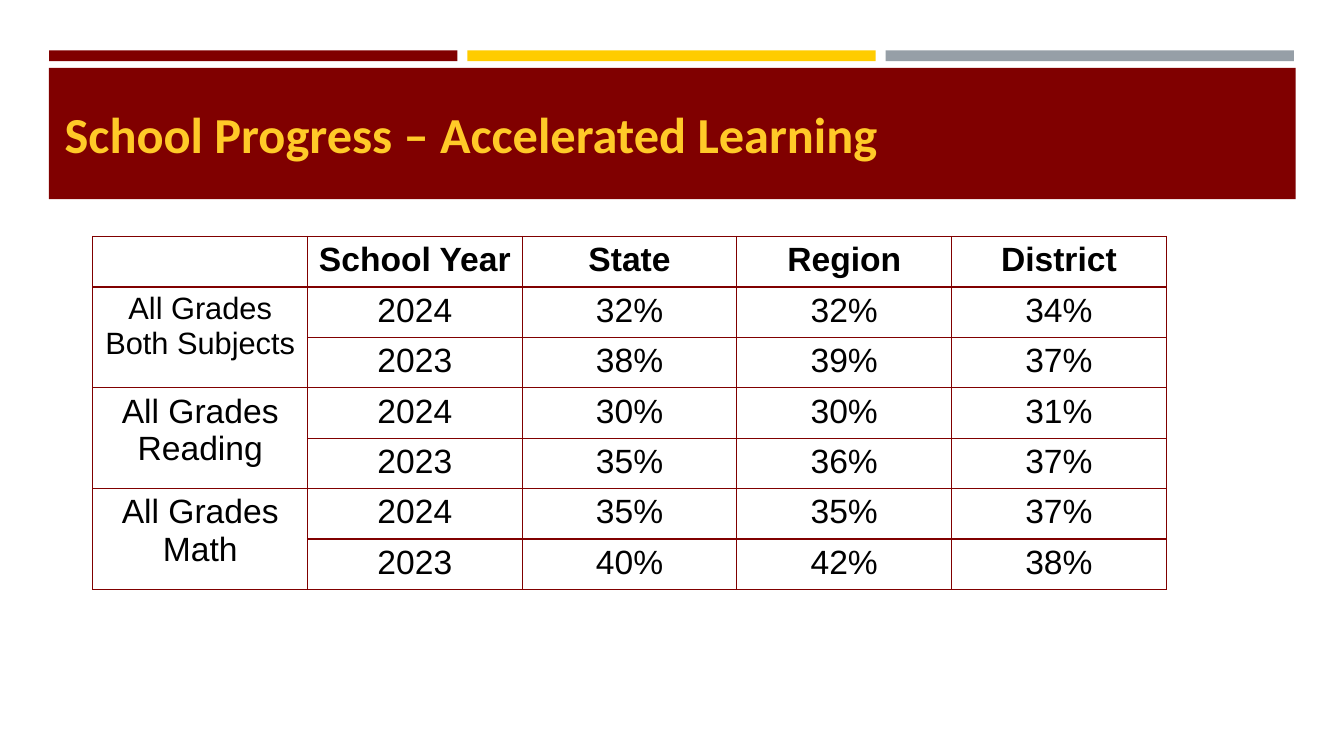
"""Build the school progress slide with its accelerated learning table."""
from lxml.etree import SubElement
from pptx import Presentation
from pptx.dml.color import RGBColor
from pptx.enum.shapes import MSO_SHAPE
from pptx.enum.text import MSO_ANCHOR, PP_ALIGN
from pptx.oxml.ns import qn
from pptx.util import Cm, Pt

MAROON = RGBColor(0x80, 0x00, 0x00)
GOLD = RGBColor(0xFF, 0xCC, 0x00)
GRAY = RGBColor(0x96, 0x9F, 0xA7)
AMBER = RGBColor(0xFF, 0xCA, 0x28)
BLACK = RGBColor(0x00, 0x00, 0x00)

TITLE = "School Progress – Accelerated Learning"
HEADS = ["", "School Year", "State", "Region", "District"]
GROUPS = [
    ("All Grades Both Subjects", 22, [
        ("2024", "32%", "32%", "34%"),
        ("2023", "38%", "39%", "37%")]),
    ("All Grades Reading", 24, [
        ("2024", "30%", "30%", "31%"),
        ("2023", "35%", "36%", "37%")]),
    ("All Grades Math", 24, [
        ("2024", "35%", "35%", "37%"),
        ("2023", "40%", "42%", "38%")]),
]
BARS = [MAROON, GOLD, GRAY]
BAR_LEFT, BAR_STEP = 1.24, 10.54
COL_W, ROW_H = 5.41, 1.27


def add_bar(slide, color, left, top, width, height):
    """Draw one plain filled bar, measured in centimetres."""
    bar = slide.shapes.add_shape(
        MSO_SHAPE.RECTANGLE, Cm(left), Cm(top), Cm(width), Cm(height))
    bar.shadow.inherit = False
    bar.fill.solid()
    bar.fill.fore_color.rgb = color
    bar.line.fill.background()


def add_edges(cell):
    """Outline a cell with thin maroon lines."""
    props = cell._tc.get_or_add_tcPr()
    for side in ("lnL", "lnR", "lnT", "lnB"):
        line = SubElement(props, qn(f"a:{side}"), w=str(Pt(1)))
        fill = SubElement(line, qn("a:solidFill"))
        SubElement(fill, qn("a:srgbClr"), val=str(MAROON))


def write(cell, text, size=24, bold=False):
    """Put centred text into a table cell."""
    cell.text = text
    para = cell.text_frame.paragraphs[0]
    para.alignment = PP_ALIGN.CENTER
    font = para.font
    font.name, font.size, font.bold = "Arial", Pt(size), bold
    font.color.rgb = BLACK


def add_title(slide):
    """Place the title text over the banner."""
    title = slide.shapes.title
    title.element.getparent().append(title.element)
    title.left, title.top = Cm(1.63), Cm(1.96)
    title.width, title.height = Cm(30.63), Cm(2.82)
    frame = title.text_frame
    frame.text = TITLE
    frame.word_wrap = True
    frame.vertical_anchor = MSO_ANCHOR.MIDDLE
    frame.margin_left = frame.margin_right = 0
    frame.margin_top = frame.margin_bottom = 0
    para = frame.paragraphs[0]
    para.alignment = PP_ALIGN.LEFT
    font = para.font
    font.name, font.size, font.bold = "Calibri", Pt(36), True
    font.color.rgb = AMBER


def add_grid(slide):
    """Add the table, with one merged label for each pair of years."""
    rows = 1 + sum(len(years) for _, _, years in GROUPS)
    cols = len(HEADS)
    table = slide.shapes.add_table(
        rows, cols, Cm(2.34), Cm(5.96),
        Cm(COL_W * cols), Cm(ROW_H * rows)).table
    table.first_row = table.horz_banding = False
    for col in table.columns:
        col.width = Cm(COL_W)
    for row in table.rows:
        row.height = Cm(ROW_H)
    for cell in table.iter_cells():
        add_edges(cell)
        cell.fill.background()
        cell.margin_left = cell.margin_right = Cm(0.24)
    for col, head in enumerate(HEADS):
        if head:
            write(table.cell(0, col), head, bold=True)
    top = 1
    for label, size, years in GROUPS:
        first = table.cell(top, 0)
        first.merge(table.cell(top + len(years) - 1, 0))
        write(first, label, size)
        for row, values in enumerate(years, top):
            for col, value in enumerate(values, 1):
                write(table.cell(row, col), value)
        top += len(years)


def main():
    """Assemble and save the slide."""
    deck = Presentation()
    deck.slide_width, deck.slide_height = Cm(33.87), Cm(19.05)
    slide = deck.slides.add_slide(deck.slide_layouts[5])
    for index, color in enumerate(BARS):
        add_bar(slide, color, BAR_LEFT + index * BAR_STEP, 1.27, 10.29, 0.27)
    add_bar(slide, MAROON, 1.23, 1.71, 31.42, 3.31)
    add_title(slide)
    add_grid(slide)
    deck.save("out.pptx")


if __name__ == "__main__":
    main()
